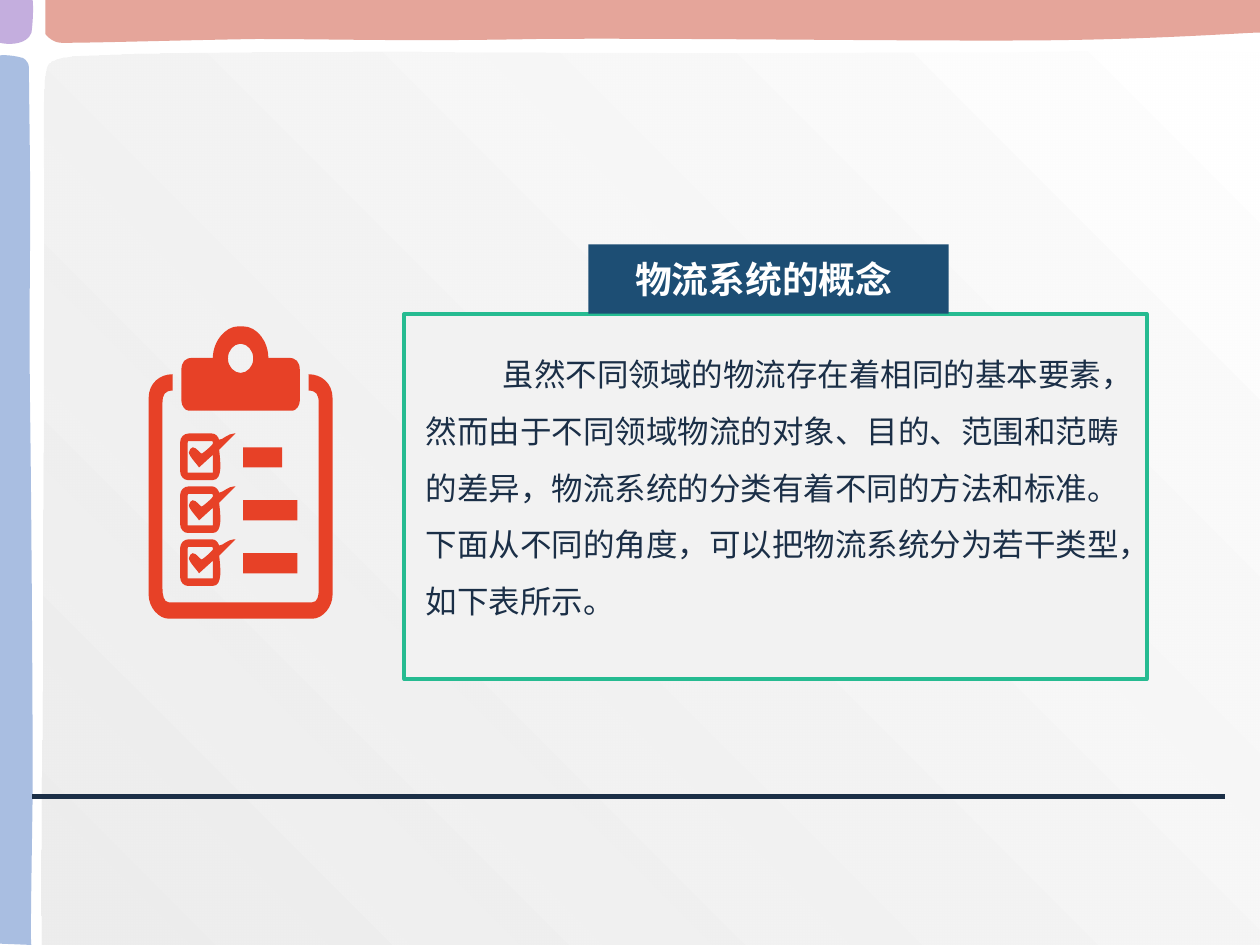
from lxml import etree
from pptx import Presentation
from pptx.dml.color import RGBColor
from pptx.enum.shapes import MSO_CONNECTOR as Connector, MSO_SHAPE as Preset
from pptx.enum.text import MSO_ANCHOR as Anchor, MSO_AUTO_SIZE as AutoSize, PP_ALIGN as Align
from pptx.oxml.ns import qn
from pptx.util import Inches, Pt

FONT = "Noto Sans CJK SC"
NAVY, RED, GREEN, BLUE = "1B2F47", "E74127", "26BB91", "1D4E74"
COMMANDS = {"M": ("a:moveTo", 1), "L": ("a:lnTo", 1), "C": ("a:cubicBezTo", 3), "Z": ("a:close", 0)}
HEADING = "物流系统的概念"
BODY = (
    "虽然不同领域的物流存在着相同的基本要素，然而由于不同领域物流的对象、目的、范围和范畴的差异，"
    "物流系统的分类有着不同的方法和标准。下面从不同的角度，可以把物流系统分为若干类型，如下表所示。"
)

PANEL = (
    "M 10 7.5 L 10 0.42 C 8.86 0.38 8.55 0.42 7.6 0.42 C 6.66 0.42 5.5 0.43 4.33 0.42 "
    "C 3.16 0.41 1.23 0.41 0.57 0.45 C 0.36 0.48 0.36 0.49 0.35 0.73 "
    "C 0.34 0.96 0.35 1.1 0.35 1.82 C 0.35 2.56 0.34 4.12 0.34 5.06 "
    "C 0.34 6.01 0.32 6.62 0.33 7.5 C 5.17 7.5 10 7.5 10 7.5 Z"
)
TOP_BAND = (
    "M 10 0 L 10 0.26 C 10.01 0.25 9.28 0.31 8.32 0.32 C 7.36 0.33 5.31 0.3 4.26 0.31 "
    "C 3.21 0.33 2.65 0.31 2.03 0.31 C 1.4 0.32 0.77 0.34 0.49 0.34 "
    "C 0.41 0.34 0.36 0.27 0.36 0.27 C 0.36 0.27 0.36 0.14 0.36 0 L 10 0 Z"
)
LEFT_BAND = (
    "M 0 7.49 L 0.25 7.5 C 0.24 7.51 0.25 6.98 0.26 6.28 C 0.26 5.58 0.25 4.07 0.24 3.3 "
    "C 0.23 2.54 0.24 2.12 0.24 1.67 C 0.24 1.21 0.23 0.75 0.23 0.54 "
    "C 0.23 0.48 0.18 0.46 0.18 0.46 C 0.07 0.43 0 0.44 0 0.44 L 0 7.49 Z"
)
CORNER = (
    "M 0 0 L 0.26 0 C 0.27 0.12 0.25 0.26 0.25 0.26 C 0.23 0.31 0.19 0.33 0.15 0.34 "
    "C 0.07 0.36 0 0.34 0 0.34 L 0 0 Z"
)
BOARD = (
    "M 1.29 3.2 C 1.29 3.13 1.31 3.1 1.37 3.1 L 1.37 2.97 C 1.27 2.97 1.18 3.04 1.18 3.16 "
    "L 1.18 4.72 C 1.18 4.82 1.26 4.91 1.34 4.91 L 2.48 4.91 C 2.56 4.91 2.64 4.82 2.64 4.72 "
    "L 2.64 3.16 C 2.64 3.04 2.55 2.97 2.45 2.97 L 2.45 3.1 C 2.51 3.1 2.53 3.13 2.53 3.2 "
    "L 2.53 4.68 C 2.53 4.73 2.52 4.78 2.48 4.78 L 1.34 4.78 C 1.3 4.78 1.29 4.72 1.29 4.67 "
    "L 1.29 3.2 Z"
)
CLIP = (
    "M 1.81 2.84 C 1.81 2.78 1.86 2.73 1.9 2.73 L 1.92 2.73 C 1.96 2.73 2.01 2.78 2.01 2.84 "
    "L 2.01 2.85 C 2.01 2.91 1.96 2.96 1.91 2.96 L 1.91 2.96 C 1.86 2.96 1.81 2.91 1.81 2.85 "
    "L 1.81 2.84 Z M 1.69 2.84 L 1.53 2.84 C 1.47 2.84 1.44 2.87 1.44 2.94 L 1.44 3.18 "
    "C 1.44 3.22 1.47 3.26 1.5 3.26 L 2.32 3.26 C 2.35 3.26 2.38 3.22 2.38 3.18 "
    "L 2.38 2.94 C 2.38 2.87 2.35 2.84 2.29 2.84 L 2.13 2.84 "
    "C 2.13 2.71 2.04 2.59 1.93 2.59 L 1.89 2.59 C 1.79 2.59 1.69 2.71 1.69 2.84 Z"
)
CHECK = (
    "M 1.49 3.52 C 1.49 3.5 1.49 3.5 1.5 3.5 L 1.68 3.5 C 1.69 3.5 1.69 3.5 1.69 3.52 "
    "C 1.69 3.53 1.61 3.6 1.6 3.6 C 1.59 3.6 1.56 3.55 1.53 3.55 "
    "C 1.52 3.55 1.5 3.57 1.5 3.59 L 1.5 3.59 C 1.5 3.62 1.57 3.69 1.58 3.71 "
    "L 1.69 3.61 L 1.69 3.75 L 1.49 3.75 L 1.49 3.52 Z "
    "M 1.74 3.49 C 1.73 3.46 1.71 3.44 1.68 3.44 L 1.5 3.44 C 1.46 3.44 1.43 3.47 1.43 3.51 "
    "L 1.43 3.74 C 1.43 3.78 1.46 3.81 1.49 3.81 L 1.69 3.81 C 1.77 3.81 1.75 3.66 1.74 3.57 "
    "L 1.87 3.44 C 1.87 3.44 1.86 3.44 1.86 3.44 C 1.81 3.44 1.77 3.49 1.74 3.49 Z"
)
BAR_RIGHTS = (2.24, 2.36, 2.36)
ROW_PITCH = 0.42


def rgb(value):
    """Turn a hex string into a colour."""
    return RGBColor.from_string(value)


def read_outline(outline, down=0):
    """Return drawing commands with their points in inches, moved down as asked."""
    tokens = iter(outline.split())
    steps = []
    for letter in tokens:
        tag, count = COMMANDS[letter]
        steps.append((tag, [(float(next(tokens)), float(next(tokens)) + down) for _ in range(count)]))
    return steps


def add_outline(slide, box, steps):
    """Add a freeform that fills the box and follows the given commands."""
    left, top, width, height = (Inches(value) for value in box)
    builder = slide.shapes.build_freeform(left, top, scale=1.0)
    builder.add_line_segments([(left + width, top), (left + width, top + height), (left, top + height)])
    shape = builder.convert_to_shape()
    shape.shadow.inherit = False
    shape.line.fill.background()
    geometry = next(shape._element.spPr.iter(qn("a:path")))
    for child in list(geometry):
        geometry.remove(child)
    for tag, points in steps:
        command = etree.SubElement(geometry, qn(tag))
        for x, y in points:
            point = etree.SubElement(command, qn("a:pt"))
            point.set("x", str(Inches(x) - left))
            point.set("y", str(Inches(y) - top))
    return shape


def paint(shape, color):
    """Give a shape a solid fill."""
    shape.fill.solid()
    shape.fill.fore_color.rgb = rgb(color)


def make_translucent(shape, percent):
    """Set the opacity of the first fill colour of a shape."""
    color = next(shape._element.spPr.iter(qn("a:srgbClr")))
    etree.SubElement(color, qn("a:alpha")).set("val", str(percent * 1000))


def add_backdrop(slide):
    """Add the shaded panel and the coloured bands at the edges."""
    panel = add_outline(slide, (0.32, 0.38, 9.68, 7.12), read_outline(PANEL))
    panel.fill.gradient()
    panel.fill.gradient_angle = 45
    for stop, position, color in zip(panel.fill.gradient_stops, (0, 1), ("E6E6E6", "FFFFFF")):
        stop.position = position
        stop.color.rgb = rgb(color)
    make_translucent(panel, 70)
    bands = (
        (TOP_BAND, (0.36, 0, 9.65, 0.34), "DA7F70"),
        (LEFT_BAND, (0, 0.43, 0.27, 7.07), "85A3D5"),
        (CORNER, (0, 0, 0.27, 0.36), "AC8CD0"),
    )
    for outline, box, color in bands:
        band = add_outline(slide, box, read_outline(outline))
        paint(band, color)
        make_translucent(band, 70)


def add_rule(slide):
    """Add the dark line across the foot of the slide."""
    rule = slide.shapes.add_connector(
        Connector.STRAIGHT, Inches(9.72), Inches(6.32), Inches(0.25), Inches(6.32))
    rule.line.color.rgb = rgb(NAVY)
    rule.line.width = Pt(3)
    etree.SubElement(rule._element.spPr, qn("a:effectLst"))


def add_checklist(slide):
    """Add the clipboard with its ticked rows."""
    steps = read_outline(BOARD) + read_outline(CLIP)
    for row, right in enumerate(BAR_RIGHTS):
        bar = f"M 1.93 3.71 L {right} 3.71 L {right} 3.55 L 1.93 3.55 L 1.93 3.71 Z"
        steps += read_outline(f"{CHECK} {bar}", row * ROW_PITCH)
    paint(add_outline(slide, (1.18, 2.59, 1.47, 2.32), steps), RED)


def add_run(paragraph, text, size, color, bold=False):
    """Add a formatted run for Latin and East Asian letters."""
    run = paragraph.add_run()
    run.text = text
    run.font.size = Pt(size)
    run.font.bold = bold
    run.font.color.rgb = rgb(color)
    run.font.name = FONT
    etree.SubElement(run._r.get_or_add_rPr(), qn("a:ea")).set("typeface", FONT)


def add_frame(slide):
    """Add the bordered box behind the body text."""
    frame = slide.shapes.add_shape(
        Preset.RECTANGLE, Inches(3.21), Inches(2.49), Inches(5.89), Inches(2.9))
    frame.shadow.inherit = False
    paint(frame, "F2F2F2")
    frame.line.color.rgb = rgb(GREEN)
    frame.line.width = Pt(2.25)


def place_heading(slide):
    """Turn the title placeholder into the label on top of the box."""
    title = slide.shapes.title
    title.left, title.top = Inches(4.67), Inches(1.94)
    title.width, title.height = Inches(2.86), Inches(0.55)
    paint(title, BLUE)
    text_frame = title.text_frame
    text_frame.auto_size = AutoSize.NONE
    text_frame.vertical_anchor = Anchor.MIDDLE
    text_frame.margin_left = Inches(0.37)
    text_frame.margin_right = Inches(0.1)
    text_frame.margin_top = text_frame.margin_bottom = Inches(0.05)
    paragraph = text_frame.paragraphs[0]
    paragraph.alignment = Align.LEFT
    add_run(paragraph, HEADING, 21, "FFFFFF", bold=True)
    slide.shapes._spTree.append(title._element)


def add_body(slide):
    """Add the body paragraph with its first-line indent."""
    box = slide.shapes.add_textbox(Inches(3.38), Inches(2.67), Inches(5.68), Inches(2.27))
    text_frame = box.text_frame
    text_frame.word_wrap = True
    text_frame.margin_left = text_frame.margin_right = 0
    text_frame.margin_top = text_frame.margin_bottom = 0
    paragraph = text_frame.paragraphs[0]
    paragraph.line_spacing = 1.5
    paragraph._p.get_or_add_pPr().set("indent", str(Inches(0.61)))
    add_run(paragraph, BODY, 18, NAVY)


def main():
    """Build the slide and save it."""
    presentation = Presentation()
    presentation.slide_width, presentation.slide_height = Inches(10), Inches(7.5)
    slide = presentation.slides.add_slide(presentation.slide_layouts[5])
    add_backdrop(slide)
    add_rule(slide)
    add_checklist(slide)
    add_frame(slide)
    place_heading(slide)
    add_body(slide)
    presentation.save("out.pptx")


if __name__ == "__main__":
    main()
